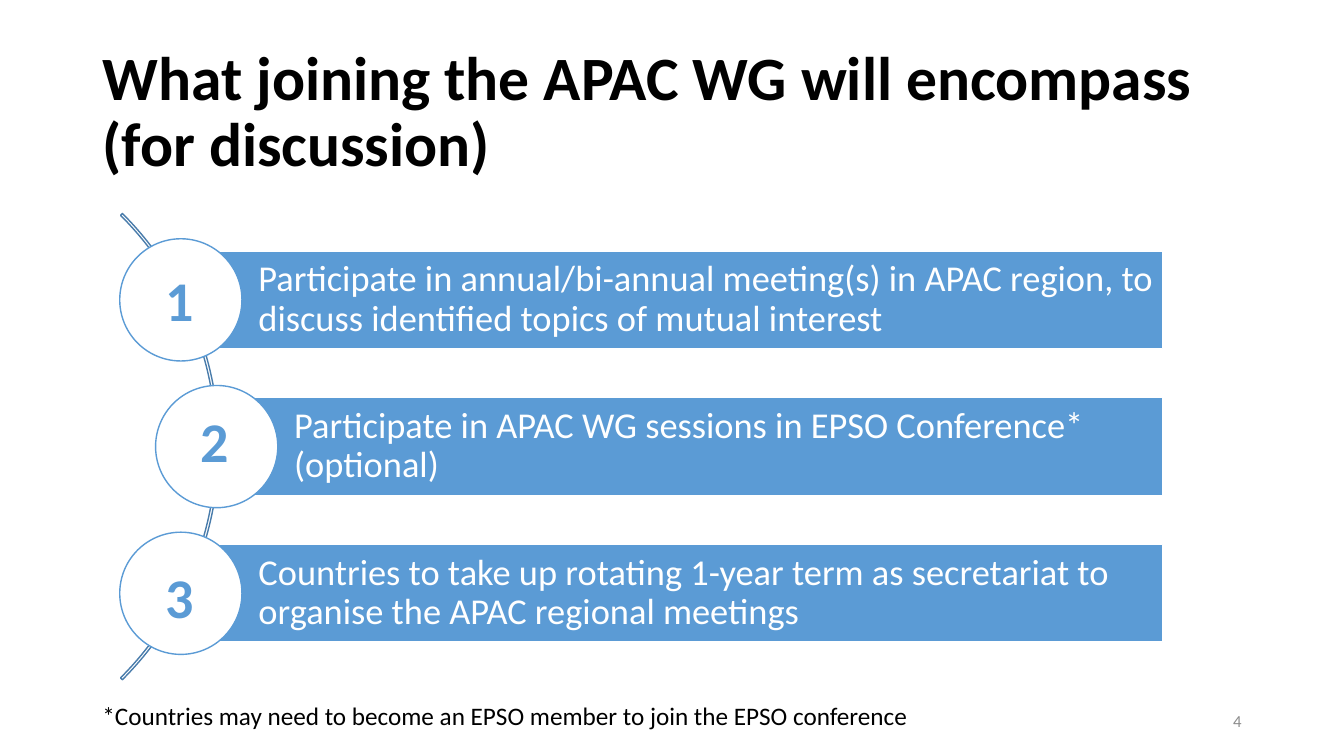
import pptx
import pptx.util
import pptx.dml.color
import pptx.enum.shapes
import pptx.enum.text

Pt = pptx.util.Pt
SHAPES = pptx.enum.shapes.MSO_SHAPE
ALIGN = pptx.enum.text.PP_ALIGN
ANCHOR = pptx.enum.text.MSO_ANCHOR
COLORS = {"blue": "5B9BD5", "arc": "497CAB", "white": "FFFFFF", "black": "000000", "grey": "8C8C8C"}


def write_text(shape, text, size, color, bold=False, align=ALIGN.LEFT, anchor=ANCHOR.TOP):
    frame = shape.text_frame
    frame.text = text
    frame.word_wrap = True
    frame.auto_size = pptx.enum.text.MSO_AUTO_SIZE.NONE
    frame.vertical_anchor = anchor
    paragraph = frame.paragraphs[0]
    paragraph.alignment = align
    paragraph.font.name = "Calibri"
    paragraph.font.size = Pt(size)
    paragraph.font.bold = bold
    paragraph.font.color.rgb = pptx.dml.color.RGBColor.from_string(COLORS[color])
    return paragraph


def add_shape(kind, left, top, width, height, line, fill=None):
    shape = slide.shapes.add_shape(kind, Pt(left), Pt(top), Pt(width), Pt(height))
    shape.shadow.inherit = False
    if fill:
        shape.fill.solid()
        shape.fill.fore_color.rgb = pptx.dml.color.RGBColor.from_string(COLORS[fill])
    else:
        shape.fill.background()
    shape.line.color.rgb = pptx.dml.color.RGBColor.from_string(COLORS[line])
    shape.line.width = Pt(1)
    return shape


presentation = pptx.Presentation()
presentation.slide_width = Pt(960)
presentation.slide_height = Pt(540)
slide = presentation.slides.add_slide(presentation.slide_layouts[5])

# Title
title = slide.shapes.title
title.left, title.top, title.width, title.height = Pt(66), Pt(28.75), Pt(828), Pt(104.4)
paragraph = write_text(title, "What joining the APAC WG will encompass (for discussion)",
                       44, "black", bold=True, anchor=ANCHOR.MIDDLE)
paragraph.line_spacing = 0.9

# Footnote and slide number
footnote = slide.shapes.add_textbox(Pt(66), Pt(496.8), Pt(804), Pt(29))
write_text(footnote, "*Countries may need to become an EPSO member to join the EPSO conference", 18, "black")
number = slide.shapes.add_textbox(Pt(678), Pt(500.5), Pt(216), Pt(28.8))
write_text(number, "4", 12, "grey", align=ALIGN.RIGHT, anchor=ANCHOR.MIDDLE)

# Arc behind the steps
arc = add_shape(SHAPES.BLOCK_ARC, -314.6, 83.5, 471, 471, "arc")
for index, value in enumerate((189, 27, 0.004)):
    arc.adjustments[index] = value

# Steps: text, horizontal centre of the circle, top of the digit
steps = [
    ("Participate in annual/bi-annual meeting(s) in APAC region, to discuss identified topics of mutual interest",
     129.2, 185.8),
    ("Participate in APAC WG sessions in EPSO Conference* (optional)", 154.8, 286.6),
    ("Countries to take up rotating 1-year term as secretariat to organise the APAC regional meetings",
     129.2, 398.2),
]
BAR_RIGHT, BAR_HEIGHT, RADIUS = 830.4, 69.8, 43.65
FIRST_MIDDLE, STEP_PITCH = 214.2, 104.8

for index, (text, center, digit_top) in enumerate(steps):
    middle = FIRST_MIDDLE + index * STEP_PITCH
    bar = add_shape(SHAPES.RECTANGLE, center, middle - BAR_HEIGHT / 2,
                    BAR_RIGHT - center, BAR_HEIGHT, "white", "blue")
    paragraph = write_text(bar, text, 26, "white", anchor=ANCHOR.MIDDLE)
    paragraph.line_spacing = 0.9
    frame = bar.text_frame
    frame.margin_left = Pt(55.4)
    frame.margin_top = frame.margin_right = frame.margin_bottom = Pt(5.2)

    add_shape(SHAPES.OVAL, center - RADIUS, middle - RADIUS, 2 * RADIUS, 2 * RADIUS, "blue", "white")
    digit = slide.shapes.add_textbox(Pt(center - 18.4), Pt(digit_top), Pt(25.2), Pt(55.4))
    write_text(digit, str(index + 1), 40, "blue", bold=True)

presentation.save("out.pptx")
